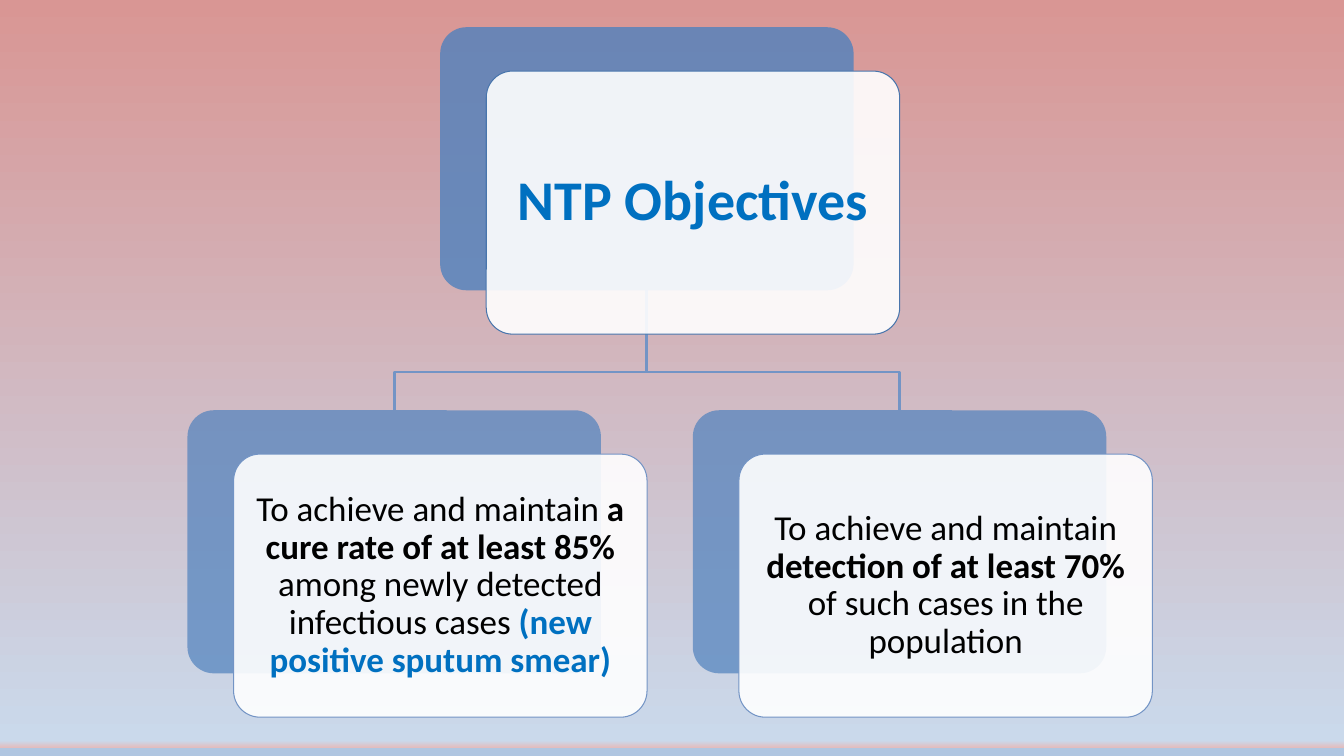
import pptx
import pptx.dml.color
import pptx.enum.shapes
import pptx.enum.text
import pptx.oxml.ns
import pptx.util
from lxml import etree

COLORS = {"blue": "4F81BD", "connector": "7394C5", "title_edge": "4875AC",
          "white": "FFFFFF", "black": "000000", "accent": "0070C0"}
BACKGROUND = [(0, "D99694"), (98, "CAD9EB"), (99, "E6B9B8"), (99, "B0C6E1")]

# Percentages of the slide's width (x) or height (y)
LEFT, COLUMN = 13.95, 18.8
TOP, ROW = 3.6, 50.67
CARD_W, CARD_H = 30.76, 34.8
SHIFT_X, SHIFT_Y = 3.43, 5.8
BEND_Y = 49.2

PLAIN = {"size": pptx.util.Pt(25), "bold": False, "color": "black"}
BOLD = {**PLAIN, "bold": True}
ACCENT = {**BOLD, "color": "accent"}
TITLE = {**ACCENT, "size": pptx.util.Pt(40)}


def rgb(name):
    return pptx.dml.color.RGBColor.from_string(COLORS[name])


def corner(col, row):
    return LEFT + col * COLUMN, TOP + row * ROW


class Diagram:
    font = "Calibri"

    def __init__(self, prs):
        self.prs = prs
        self.s = prs.slides.add_slide(prs.slide_layouts[6])

    def x(self, share):
        return round(self.prs.slide_width * share / 100)

    def y(self, share):
        return round(self.prs.slide_height * share / 100)

    def background(self, stops):
        fill = self.s.background.fill
        fill.gradient()
        fill.gradient_angle = 270
        qn = pptx.oxml.ns.qn
        gs_list = self.s.element.find(".//" + qn("a:gsLst"))
        for gs in list(gs_list):
            gs_list.remove(gs)
        for position, color in stops:
            gs = etree.SubElement(gs_list, qn("a:gs"), pos=str(position * 1000))
            etree.SubElement(gs, qn("a:srgbClr"), val=color)

    def branch(self, parent, child):
        """Draw an elbow from a parent card's bottom to a child card's top."""
        px, py = corner(*parent)
        cx, cy = corner(*child)
        px, cx = px + CARD_W / 2, cx + CARD_W / 2
        start, *bends = [(self.x(a), self.y(b)) for a, b in
                         ((px, py + CARD_H), (px, BEND_Y), (cx, BEND_Y), (cx, cy))]
        builder = self.s.shapes.build_freeform(*start)
        builder.add_line_segments(bends, close=False)
        sp = builder.convert_to_shape()
        sp.shadow.inherit = False
        sp.fill.background()
        self.outline(sp, "connector", 2)

    def outline(self, sp, color, width):
        sp.line.color.rgb = rgb(color)
        sp.line.width = pptx.util.Pt(width)

    def panel(self, left, top, color, opacity):
        sp = self.s.shapes.add_shape(
            pptx.enum.shapes.MSO_SHAPE.ROUNDED_RECTANGLE,
            self.x(left), self.y(top), self.x(CARD_W), self.y(CARD_H))
        sp.adjustments[0] = 0.1
        sp.shadow.inherit = False
        sp.fill.solid()
        sp.fill.fore_color.rgb = rgb(color)
        qn = pptx.oxml.ns.qn
        clr = sp.element.spPr.find(qn("a:solidFill")).find(qn("a:srgbClr"))
        etree.SubElement(clr, qn("a:alpha"), val=str(opacity * 1000))
        return sp

    def card(self, col, row, runs, opacity=70, edge="connector", margin=0.1):
        left, top = corner(col, row)
        self.panel(left, top, "blue", opacity).line.fill.background()
        front = self.panel(left + SHIFT_X, top + SHIFT_Y, "white", 90)
        self.outline(front, edge, 0.75)
        self.text(front.text_frame, runs, pptx.util.Inches(margin))

    def text(self, tf, runs, margin):
        frame = {f"margin_{side}": margin for side in ("left", "top", "right", "bottom")}
        frame |= {"word_wrap": True,
                  "vertical_anchor": pptx.enum.text.MSO_ANCHOR.MIDDLE}
        for name, value in frame.items():
            setattr(tf, name, value)
        p = tf.paragraphs[0]
        p.alignment = pptx.enum.text.PP_ALIGN.CENTER
        p.line_spacing = 0.9
        for words, style in runs:
            r = p.add_run()
            r.text = words
            r.font.color.rgb = rgb(style["color"])
            for name, value in {"name": self.font, **style}.items():
                if name != "color":
                    setattr(r.font, name, value)


def main():
    prs = pptx.Presentation()
    prs.slide_width = pptx.util.Inches(13.33)
    prs.slide_height = pptx.util.Inches(7.5)
    diagram = Diagram(prs)
    diagram.background(BACKGROUND)

    root, cure, detection = (1, 0), (0, 1), (2, 1)
    for child in (detection, cure):
        diagram.branch(root, child)
    diagram.card(*root, [("NTP Objectives", TITLE)],
                 opacity=80, edge="title_edge", margin=0.17)
    diagram.card(*cure, [("To achieve and maintain ", PLAIN),
                         ("a cure rate of at least 85% ", BOLD),
                         ("among newly detected infectious cases ", PLAIN),
                         ("(new positive sputum smear)", ACCENT)])
    diagram.card(*detection, [("To achieve and maintain ", PLAIN),
                              ("detection of at least 70% ", BOLD),
                              ("of such cases in the population", PLAIN)])
    prs.save("out.pptx")


if __name__ == "__main__":
    main()
